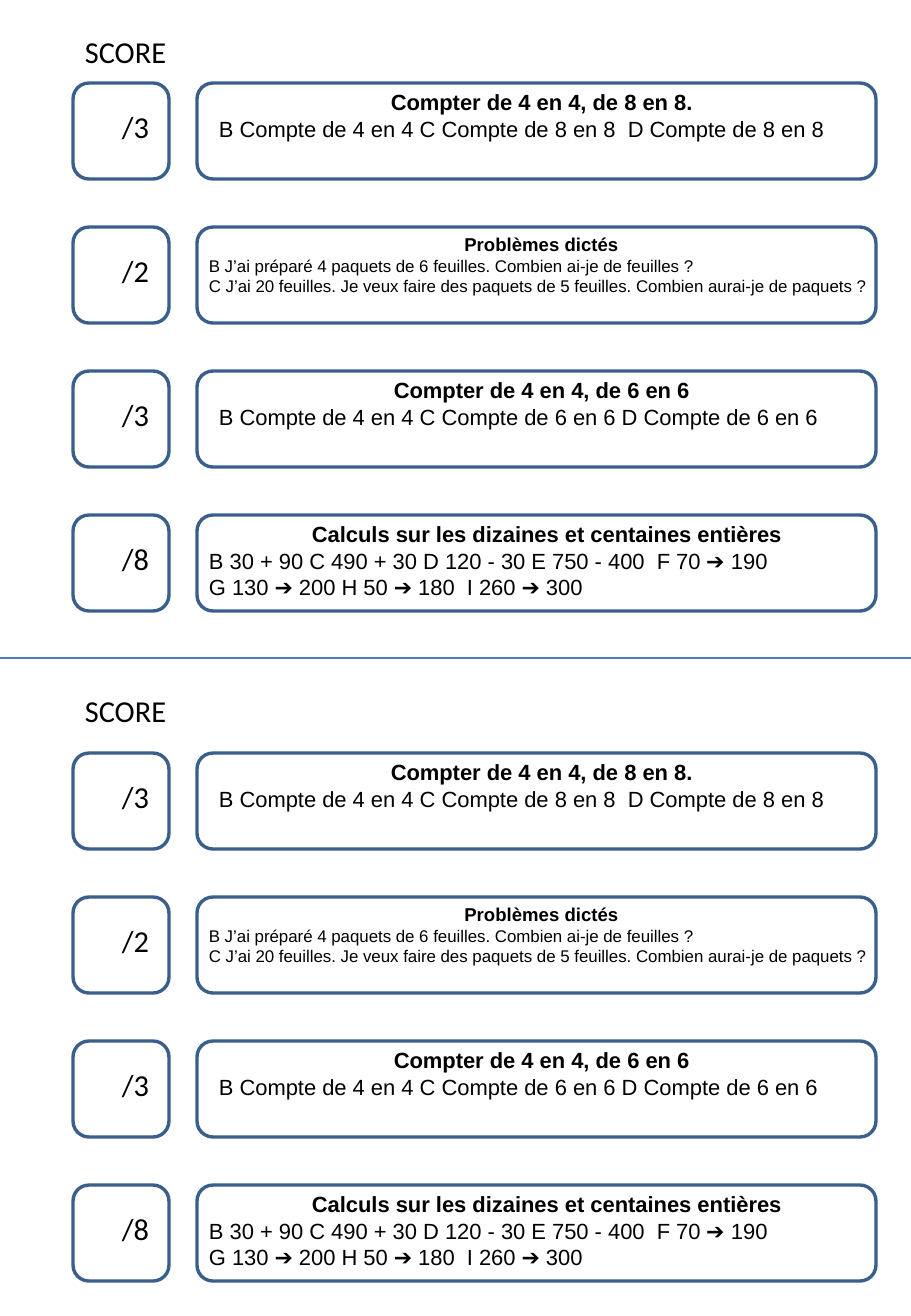
"""Build a page holding the same mental arithmetic score sheet twice."""
from lxml.etree import SubElement
from pptx import Presentation
from pptx.dml.color import RGBColor
from pptx.enum.shapes import MSO_CONNECTOR, MSO_SHAPE
from pptx.enum.text import MSO_AUTO_SIZE, PP_ALIGN
from pptx.oxml.ns import qn
from pptx.util import Pt

EXERCISES = [
    dict(score="/3", title="Compter de 4 en 4, de 8 en 8.", sizes=(13, 13), box=(207, 669, 66),
         lines=["B Compte de 4 en 4 C Compte de 8 en 8  D Compte de 8 en 8"]),
    dict(score="/2", title="Problèmes dictés", sizes=(11, 10), box=(197, 689, 75),
         lines=["B J’ai préparé 4 paquets de 6 feuilles. Combien ai-je de feuilles ?",
                "C J’ai 20 feuilles. Je veux faire des paquets de 5 feuilles. "
                "Combien aurai-je de paquets ?"]),
    dict(score="/3", title="Compter de 4 en 4, de 6 en 6", sizes=(13, 13), box=(207, 669, 66),
         lines=["B Compte de 4 en 4 C Compte de 6 en 6 D Compte de 6 en 6"]),
    dict(score="/8", title="Calculs sur les dizaines et centaines entières", sizes=(13, 13),
         box=(197, 699, 92),
         lines=["B 30 + 90 C 490 + 30 D 120 - 30 E 750 - 400  F 70 ➔ 190",
                "G 130 ➔ 200 H 50 ➔ 180  I 260 ➔ 300"]),
]
SHEETS = [dict(label_top=27, first_top=83), dict(label_top=686, first_top=753)]
COLORS = dict(frame="3A5F8C", divider="4B7EBC", text="000000")
SLIDE_W, SLIDE_H = 911, 1316
SCORE_X, FRAME_X = 73, 197
FRAME_W, FRAME_H = 679, 96
PITCH = 144
DIVIDER_Y = 658
SCALE = 914400 / 121.5


def px(*values):
    return [round(v * SCALE) for v in values]


def color(name):
    return RGBColor.from_string(COLORS[name])


def add_frame(x, y, w):
    s = slide.shapes.add_shape(MSO_SHAPE.FLOWCHART_ALTERNATE_PROCESS, *px(x, y, w, FRAME_H))
    s.shadow.inherit = False
    s.fill.background()
    s.line.color.rgb = color("frame")
    s.line.width = Pt(2)


def add_text(x, y, w, h, lines, font, size):
    tf = slide.shapes.add_textbox(*px(x, y, w, h)).text_frame
    tf.word_wrap = True
    tf.auto_size = MSO_AUTO_SIZE.SHAPE_TO_FIT_TEXT
    tf.text = "\n".join(lines)
    for p in tf.paragraphs:
        for r in p.runs:
            r.font.name = font
            r.font.size = Pt(size)
            r.font.color.rgb = color("text")
    return tf


def add_exercise(y, score, title, sizes, box, lines):
    add_frame(SCORE_X, y, FRAME_H)
    tf = add_text(SCORE_X + 10, y + 19, FRAME_H, 49, [score], "Calibri", 18)
    tf.margin_left = px(39)[0]

    add_frame(FRAME_X, y, FRAME_W)
    x, w, h = box
    title_size, body_size = sizes
    tf = add_text(x, y, w, h, [title] + lines, "Arial", body_size)
    p = tf.paragraphs[0]
    p.alignment = PP_ALIGN.CENTER
    p.runs[0].font.bold = True
    p.runs[0].font.size = Pt(title_size)


prs = Presentation()
prs.slide_width, prs.slide_height = px(SLIDE_W, SLIDE_H)
slide = prs.slides.add_slide(prs.slide_layouts[6])

divider = slide.shapes.add_connector(
    MSO_CONNECTOR.STRAIGHT, *px(0, DIVIDER_Y, SLIDE_W, DIVIDER_Y))
divider.line.color.rgb = color("divider")
divider.line.width = Pt(0.75)
SubElement(divider._element.spPr, qn("a:effectLst"))

for sheet in SHEETS:
    add_text(SCORE_X, sheet["label_top"], 163, 49, ["SCORE"], "Calibri", 18)
    for i, exercise in enumerate(EXERCISES):
        add_exercise(sheet["first_top"] + i * PITCH, **exercise)

prs.save("out.pptx")
